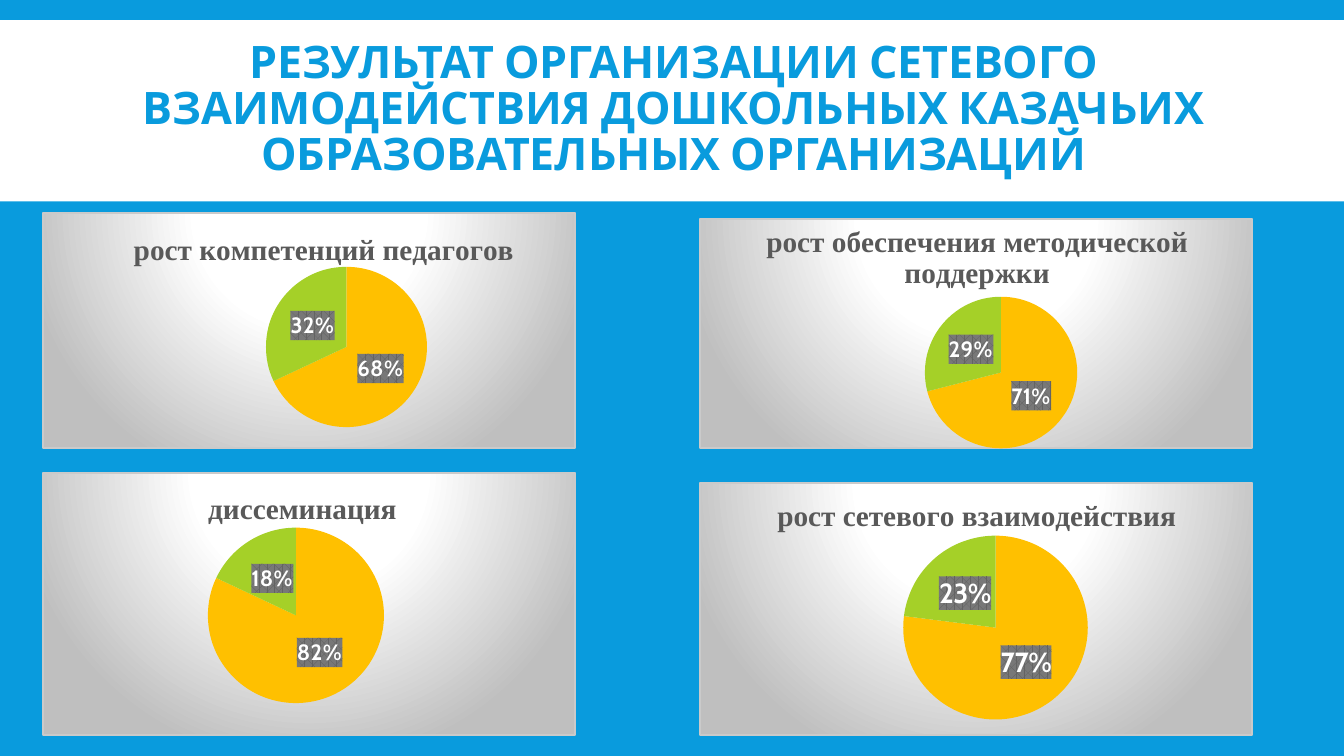
from dataclasses import dataclass

from lxml.etree import _Element as Node
from pptx import Presentation
from pptx.chart.chart import Chart
from pptx.chart.data import CategoryChartData as Data
from pptx.dml.color import RGBColor
from pptx.enum.chart import XL_CHART_TYPE as Kind, XL_LABEL_POSITION as Place
from pptx.enum.shapes import MSO_SHAPE as Form
from pptx.enum.text import MSO_ANCHOR as Anchor, PP_ALIGN as Align
from pptx.oxml import parse_xml
from pptx.oxml.ns import nsdecls, qn
from pptx.slide import Slide
from pptx.util import Inches, Pt

BLUE = RGBColor(0x09, 0x9B, 0xDD)
WHITE = RGBColor(0xFF, 0xFF, 0xFF)
GREY = RGBColor(0x59, 0x59, 0x59)
GOLD = RGBColor(0xFF, 0xC0, 0x00)
GREEN = RGBColor(0xA5, 0xD0, 0x28)
SANS, SERIF = "Cabin", "Times New Roman"
LEFT, RIGHT = (0.21, 2.65), (3.47, 2.75)  # column left and width

PANEL = f"""<c:spPr {nsdecls("c", "a")}><a:gradFill><a:gsLst>
<a:gs pos="0"><a:srgbClr val="FFFFFF"/></a:gs>
<a:gs pos="39000"><a:srgbClr val="FFFFFF"/></a:gs>
<a:gs pos="100000"><a:srgbClr val="BFBFBF"/></a:gs></a:gsLst>
<a:path path="circle"><a:fillToRect l="50000" t="-80000" r="50000" b="180000"/></a:path>
</a:gradFill><a:ln w="9525"><a:solidFill><a:srgbClr val="CACACA"/></a:solidFill></a:ln></c:spPr>"""
LABEL = f"""<c:spPr {nsdecls("c", "a")}><a:pattFill prst="pct75">
<a:fgClr><a:srgbClr val="636363"/></a:fgClr><a:bgClr><a:srgbClr val="787878"/></a:bgClr>
</a:pattFill><a:ln><a:noFill/></a:ln></c:spPr>"""


@dataclass
class Pie:
    title: str
    share: int
    col: tuple[float, float]
    top: float
    height: float
    head: tuple[float, float]
    plot: tuple[float, float, float, float]
    size: float = 8


PIES = [
    Pie("рост компетенций педагогов", 68, LEFT, 1.05, 1.18,
        (0.16, 0.06), (0.16, 0.23, 0.82, 0.68)),
    Pie("рост обеспечения методической поддержки", 71, RIGHT, 1.08, 1.15,
        (0.11, 0), (0.09, 0.34, 0.91, 0.66)),
    Pie("диссеминация", 82, LEFT, 2.34, 1.31,
        (0.3, 0.05), (0, 0.21, 0.95, 0.67)),
    Pie("рост сетевого взаимодействия", 77, RIGHT, 2.39, 1.26,
        (0.13, 0.04), (0.07, 0.21, 0.93, 0.73), 10),
]


def layout(spot: tuple[float, ...], inner: bool = False) -> Node:
    """Make a manual layout from fractions of the chart area."""
    tags = '<c:layoutTarget val="inner"/>' if inner else ""
    tags += '<c:xMode val="edge"/><c:yMode val="edge"/>'
    tags += "".join(f'<c:{key} val="{val}"/>' for key, val in zip("xywh", spot))
    return parse_xml(f'<c:layout {nsdecls("c")}><c:manualLayout>{tags}</c:manualLayout></c:layout>')


def place(chart: Chart, pie: Pie) -> None:
    """Fix the title and the plot, and fill the panel and the labels."""
    root = chart.element
    head = root.find(".//" + qn("c:title"))
    area = root.find(".//" + qn("c:plotArea"))
    for node in (head, area):
        for old in node.findall(qn("c:layout")):
            node.remove(old)
    head.find(qn("c:tx")).addnext(layout(pie.head))
    area.insert(0, layout(pie.plot, True))
    root.find(qn("c:txPr")).addprevious(parse_xml(PANEL))
    label = root.find(".//" + qn("c:dLbls"))
    label.find(qn("c:txPr")).addprevious(parse_xml(LABEL))


def draw_pie(slide: Slide, pie: Pie) -> None:
    data = Data()
    data.categories = ["1", "2"]
    data.add_series("Series 1", (pie.share, 100 - pie.share))
    left, width = pie.col
    chart = slide.shapes.add_chart(
        Kind.PIE, Inches(left), Inches(pie.top),
        Inches(width), Inches(pie.height), data).chart
    chart.has_legend = False
    chart.font.size, chart.font.name = Pt(10), SANS
    chart.font.color.rgb = WHITE

    # Heading
    chart.has_title = True
    frame = chart.chart_title.text_frame
    frame.text = pie.title
    font = frame.paragraphs[0].runs[0].font
    font.size, font.name, font.bold = Pt(10.5), SERIF, True
    font.color.rgb = GREY

    # Slices and labels
    plot = chart.plots[0]
    plot.vary_by_categories = True
    row = plot.series[0]
    for num, color in enumerate((GOLD, GREEN)):
        fill = row.points[num].format.fill
        fill.solid()
        fill.fore_color.rgb = color
    marks = row.data_labels
    marks.show_value, marks.show_percentage = False, True
    marks.number_format, marks.number_format_is_linked = "0%", False
    marks.position = Place.CENTER
    marks.font.size, marks.font.name, marks.font.bold = Pt(pie.size), SANS, True
    marks.font.color.rgb = WHITE
    place(chart, pie)


def draw_head(slide: Slide) -> None:
    # White band behind the title
    band = slide.shapes.add_shape(Form.RECTANGLE, 0, Inches(0.1), Inches(6.67), Inches(0.9))
    band.shadow.inherit = False
    band.fill.solid()
    band.fill.fore_color.rgb = WHITE
    band.line.fill.background()
    title = slide.shapes.title
    title.element.addprevious(band.element)

    # Title
    title.left, title.top = Inches(0.15), Inches(0.14)
    title.width, title.height = Inches(6.39), Inches(0.82)
    frame = title.text_frame
    frame.text = ("РЕЗУЛЬТАТ ОРГАНИЗАЦИИ СЕТЕВОГО ВЗАИМОДЕЙСТВИЯ ДОШКОЛЬНЫХ "
                  "КАЗАЧЬИХ ОБРАЗОВАТЕЛЬНЫХ ОРГАНИЗАЦИЙ")
    frame.word_wrap = True
    frame.vertical_anchor = Anchor.MIDDLE
    frame.margin_left = frame.margin_right = Inches(0.05)
    frame.margin_top = frame.margin_bottom = Inches(0.02)
    para = frame.paragraphs[0]
    para.alignment, para.line_spacing = Align.CENTER, 0.85
    font = para.runs[0].font
    font.size, font.name, font.bold = Pt(16), SANS, True
    font.color.rgb = BLUE


def main() -> None:
    deck = Presentation()
    deck.slide_width, deck.slide_height = Inches(6.67), Inches(3.75)
    slide = deck.slides.add_slide(deck.slide_layouts[5])
    back = slide.background.fill
    back.solid()
    back.fore_color.rgb = BLUE
    draw_head(slide)
    for pie in PIES:
        draw_pie(slide, pie)
    deck.save("out.pptx")


if __name__ == "__main__":
    main()
